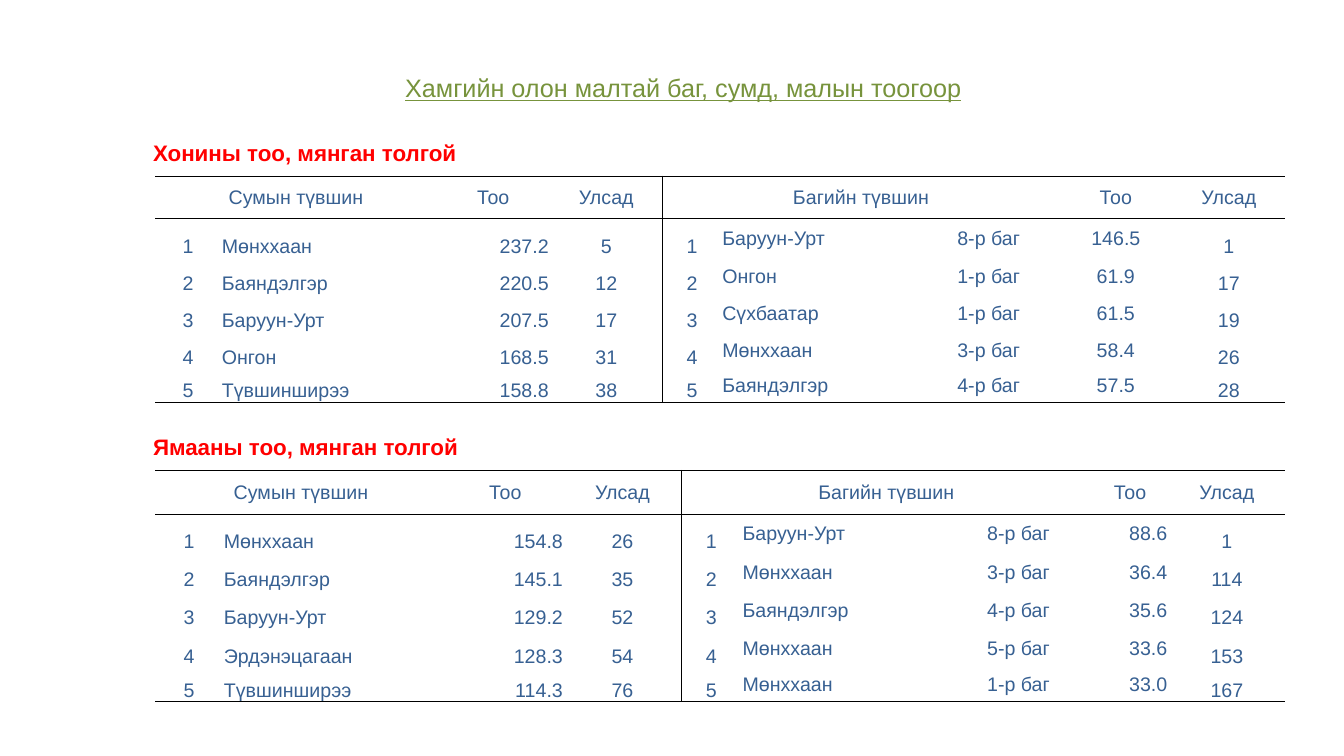
from dataclasses import dataclass

from lxml import etree
from pptx import Presentation
from pptx import util as u
from pptx.dml.color import RGBColor
from pptx.enum import text
from pptx.oxml.ns import qn


@dataclass(frozen=True)
class Theme:
    font: str = "Arial"
    title: str = "77933C"
    heading: str = "FF0000"
    body: str = "376092"
    rule: str = "000000"
    title_size: int = 18
    heading_size: int = 16
    body_size: int = 14
    rule_width: float = 0.5


T = Theme()
W, H = u.Inches(13.33), u.Inches(7.5)
LEFT, CENTER, RIGHT = text.PP_ALIGN.LEFT, text.PP_ALIGN.CENTER, text.PP_ALIGN.RIGHT
MIDDLE, BOTTOM = text.MSO_ANCHOR.MIDDLE, text.MSO_ANCHOR.BOTTOM

TITLE_BOX = (29.41, 8.93, 43.74, 5.33)
HEADING_SIZE = (43.74, 4.93)
TABLE_OFFSET = (0.9, 5.53)

HEADER = ("Сумын түвшин", "", "Тоо", "Улсад", "Багийн түвшин", "", "", "Тоо", "Улсад")
HEADER_SPANS = ((0, 1), (4, 6))
ALIGNS = (CENTER, LEFT, RIGHT, CENTER, CENTER, LEFT, CENTER, CENTER, CENTER)
BAG_COLUMNS = (5, 6, 7)
COUNT_COLUMN = 7
DIVIDER = 4

SHEEP = dict(
    heading="Хонины тоо, мянган толгой",
    box=(10.65, 17.73, 85, 35.47),
    cols=(0.65, 2.14, 1.12, 1.12, 0.58, 1.95, 1.4, 1.12, 1.12),
    rows=(0.42, 0.4, 0.37, 0.37, 0.37, 0.33),
    count_align=CENTER,
    data=(
        ("Мөнххаан", "237.2", "5", "Баруун-Урт", "8-р баг", "146.5", "1"),
        ("Баяндэлгэр", "220.5", "12", "Онгон", "1-р баг", "61.9", "17"),
        ("Баруун-Урт", "207.5", "17", "Сүхбаатар", "1-р баг", "61.5", "19"),
        ("Онгон", "168.5", "31", "Мөнххаан", "3-р баг", "58.4", "26"),
        ("Түвшинширээ", "158.8", "38", "Баяндэлгэр", "4-р баг", "57.5", "28"),
    ),
)
GOATS = dict(
    heading="Ямааны тоо, мянган толгой",
    box=(10.65, 56.67, 85, 36.13),
    cols=(0.67, 2.22, 1.16, 1.16, 0.6, 2.02, 1.45, 0.76, 1.16),
    rows=(0.44, 0.38, 0.38, 0.38, 0.38, 0.34),
    count_align=RIGHT,
    data=(
        ("Мөнххаан", "154.8", "26", "Баруун-Урт", "8-р баг", "88.6", "1"),
        ("Баяндэлгэр", "145.1", "35", "Мөнххаан", "3-р баг", "36.4", "114"),
        ("Баруун-Урт", "129.2", "52", "Баяндэлгэр", "4-р баг", "35.6", "124"),
        ("Эрдэнэцагаан", "128.3", "54", "Мөнххаан", "5-р баг", "33.6", "153"),
        ("Түвшинширээ", "114.3", "76", "Мөнххаан", "1-р баг", "33.0", "167"),
    ),
)


def place(box):
    return [round(share * side / 100) for share, side in zip(box, (W, H, W, H))]


def assign(obj, values):
    for name, value in values.items():
        setattr(obj, name, value)


def write(tf, words, size, color, align=LEFT, **fmt):
    p = tf.paragraphs[0]
    p.alignment = align
    r = p.add_run()
    r.text = words
    assign(r.font, dict(name=T.font, size=u.Pt(size), **fmt))
    r.font.color.rgb = RGBColor.from_string(color)


def add_label(s, box, words, size, color, **fmt):
    tf = s.shapes.add_textbox(*place(box)).text_frame
    assign(tf, dict(word_wrap=True, auto_size=text.MSO_AUTO_SIZE.SHAPE_TO_FIT_TEXT))
    write(tf, words, size, color, **fmt)


def set_borders(cell, sides):
    tc_pr = cell._tc.get_or_add_tcPr()
    for side in "LRTB":
        ln = etree.SubElement(tc_pr, qn(f"a:ln{side}"), w=str(u.Pt(T.rule_width)))
        if side in sides:
            fill = etree.SubElement(ln, qn("a:solidFill"))
            etree.SubElement(fill, qn("a:srgbClr"), val=T.rule)
        else:
            etree.SubElement(ln, qn("a:noFill"))


def border_sides(row, col, last_row):
    rules = {
        "L": col == DIVIDER,
        "R": col == DIVIDER - 1,
        "T": row in (0, 1),
        "B": row in (0, last_row),
    }
    return [side for side, drawn in rules.items() if drawn]


def add_ranking(s, box, cols, rows, data, count_align):
    x, y, w, h = place(box)
    table = s.shapes.add_table(len(rows), len(cols), x, y, w, h).table
    assign(table, dict(first_row=False, horz_banding=False))
    for column, share in zip(table.columns, cols):
        column.width = round(w * share / sum(cols))
    for table_row, share in zip(table.rows, rows):
        table_row.height = round(h * share / sum(rows))

    ranked = [(str(n), *d[:3], str(n), *d[3:]) for n, d in enumerate(data, 1)]
    for i, values in enumerate([HEADER, *ranked]):
        for j, words in enumerate(values):
            cell = table.cell(i, j)
            inset = u.Inches(0.01)
            assign(cell, dict(
                margin_left=inset, margin_right=inset, margin_top=inset, margin_bottom=0,
                vertical_anchor=MIDDLE if i == 0 or j in BAG_COLUMNS else BOTTOM,
            ))
            set_borders(cell, border_sides(i, j, len(rows) - 1))
            cell.fill.background()
            align = count_align if j == COUNT_COLUMN else ALIGNS[j]
            if words:
                write(cell.text_frame, words, T.body_size, T.body, CENTER if i == 0 else align)
    for first, last in HEADER_SPANS:
        table.cell(0, first).merge(table.cell(0, last))


def add_section(s, box, heading, **ranking):
    x, y, w, h = box
    dx, dy = TABLE_OFFSET
    add_label(s, (x, y, *HEADING_SIZE), heading, T.heading_size, T.heading, bold=True)
    add_ranking(s, (x + dx, y + dy, w - dx, h - dy), **ranking)


def main():
    prs = Presentation()
    assign(prs, dict(slide_width=W, slide_height=H))
    s = prs.slides.add_slide(prs.slide_layouts[6])
    add_label(s, TITLE_BOX, "Хамгийн олон малтай баг, сумд, малын тоогоор",
              T.title_size, T.title, underline=True)
    for section in (SHEEP, GOATS):
        add_section(s, **section)
    prs.save("out.pptx")


if __name__ == "__main__":
    main()
